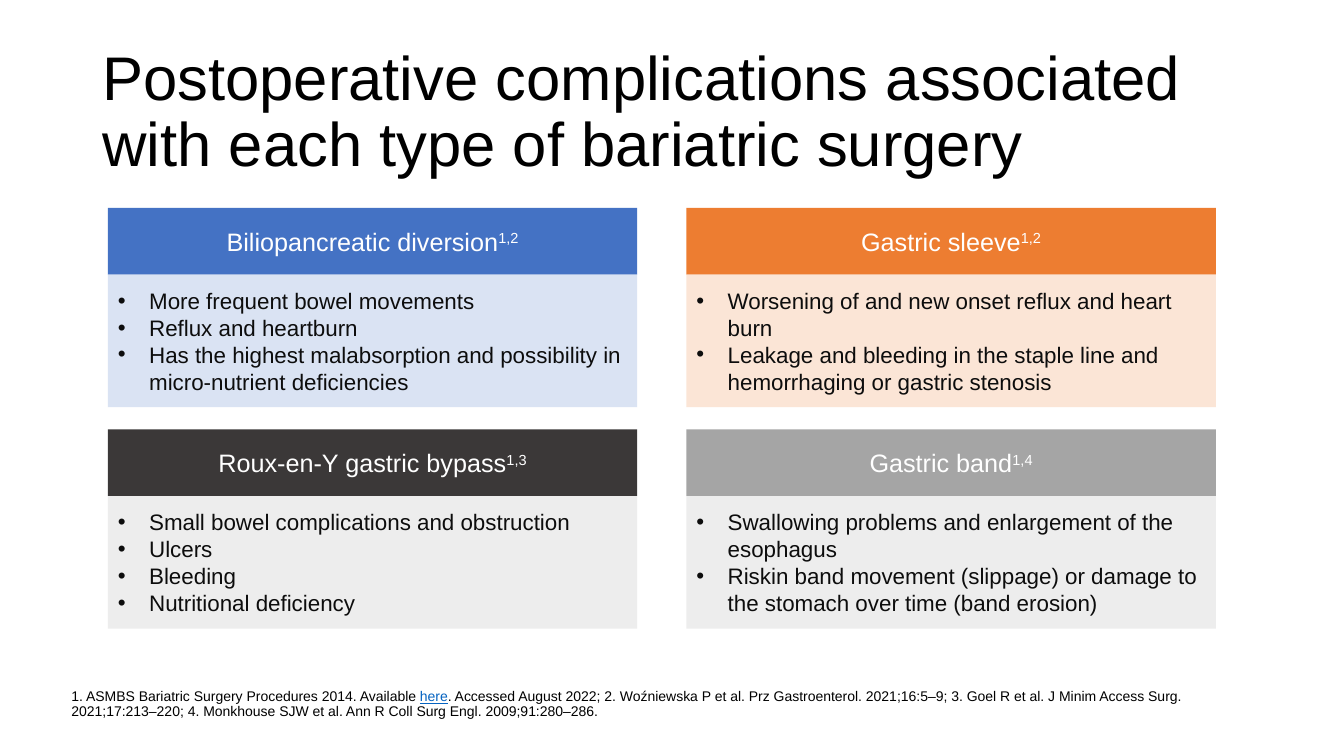
from lxml.etree import SubElement
from pptx import Presentation
from pptx.dml.color import RGBColor
from pptx.enum.shapes import MSO_SHAPE
from pptx.enum.text import MSO_ANCHOR, PP_ALIGN
from pptx.oxml.ns import qn
from pptx.util import Cm, Pt

BLACK = RGBColor(0x00, 0x00, 0x00)
WHITE = RGBColor(0xFF, 0xFF, 0xFF)
INK = RGBColor(0x0D, 0x0D, 0x0D)
LINK_BLUE = RGBColor(0x05, 0x63, 0xC1)
BLUE = RGBColor(0x44, 0x72, 0xC4)
PALE_BLUE = RGBColor(0xDA, 0xE3, 0xF3)
ORANGE = RGBColor(0xED, 0x7D, 0x31)
PALE_ORANGE = RGBColor(0xFB, 0xE5, 0xD6)
CHARCOAL = RGBColor(0x3B, 0x38, 0x38)
GREY = RGBColor(0xA5, 0xA5, 0xA5)
PALE_GREY = RGBColor(0xED, 0xED, 0xED)

# Lengths in centimetres
CARD_LEFT, CARD_TOP = 2.72, 5.24
CARD_WIDTH, HEADER_HEIGHT, BODY_HEIGHT = 13.34, 1.68, 3.34
COLUMN_STEP, ROW_STEP = 14.58, 5.58
BULLET_INDENT = 0.79

# Row by row: surgery, reference numbers, header colour, body colour, complications
SURGERIES = [
    ("Biliopancreatic diversion", "1,2", BLUE, PALE_BLUE,
     ["More frequent bowel movements",
      "Reflux and heartburn",
      "Has the highest malabsorption and possibility in micro-nutrient deficiencies"]),
    ("Gastric sleeve", "1,2", ORANGE, PALE_ORANGE,
     ["Worsening of and new onset reflux and heart burn",
      "Leakage and bleeding in the staple line and hemorrhaging or gastric stenosis"]),
    ("Roux-en-Y gastric bypass", "1,3", CHARCOAL, PALE_GREY,
     ["Small bowel complications and obstruction",
      "Ulcers",
      "Bleeding",
      "Nutritional deficiency"]),
    ("Gastric band", "1,4", GREY, PALE_GREY,
     ["Swallowing problems and enlargement of the esophagus",
      "Riskin band movement (slippage) or damage to the stomach over time (band erosion)"]),
]


class SlideBuilder:
    font_name = "Arial"

    def __init__(self, slide):
        self.slide = slide

    def style(self, paragraph, size, color):
        paragraph.font.name = self.font_name
        paragraph.font.size = Pt(size)
        paragraph.font.color.rgb = color

    def text_box(self, left, top, width, height, anchor):
        box = self.slide.shapes.add_textbox(Cm(left), Cm(top), Cm(width), Cm(height))
        frame = box.text_frame
        frame.word_wrap = True
        frame.vertical_anchor = anchor
        frame.paragraphs[0].line_spacing = 0.9
        return frame

    def title(self, text):
        frame = self.text_box(2.33, 1.02, 29.21, 3.68, MSO_ANCHOR.MIDDLE)
        heading = frame.paragraphs[0]
        heading.add_run().text = text
        self.style(heading, 44, BLACK)

    def references(self, before, link, after):
        frame = self.text_box(1.8, 17.25, 29.74, 0.89, MSO_ANCHOR.BOTTOM)
        frame.margin_left = frame.margin_right = 0
        frame.margin_top = frame.margin_bottom = 0
        citation = frame.paragraphs[0]
        self.style(citation, 10, BLACK)
        citation.add_run().text = before
        link_run = citation.add_run()
        link_run.text = link
        link_run.font.color.rgb = LINK_BLUE
        link_run.font.underline = True
        citation.add_run().text = after

    def panel(self, left, top, height, color):
        """Draw a filled card part and return its text frame."""
        rectangle = self.slide.shapes.add_shape(
            MSO_SHAPE.RECTANGLE, Cm(left), Cm(top), Cm(CARD_WIDTH), Cm(height))
        rectangle.shadow.inherit = False
        rectangle.fill.solid()
        rectangle.fill.fore_color.rgb = color
        rectangle.line.fill.background()
        frame = rectangle.text_frame
        frame.word_wrap = True
        frame.vertical_anchor = MSO_ANCHOR.MIDDLE
        return frame

    def header(self, left, top, color, surgery, reference_numbers):
        heading = self.panel(left, top, HEADER_HEIGHT, color).paragraphs[0]
        heading.alignment = PP_ALIGN.CENTER
        self.style(heading, 18, WHITE)
        heading.add_run().text = surgery
        superscript = heading.add_run()
        superscript.text = reference_numbers
        superscript.font._element.set("baseline", "30000")

    def bullet_list(self, left, top, color, complications):
        frame = self.panel(left, top, BODY_HEIGHT, color)
        frame.text = "\n".join(complications)
        for item in frame.paragraphs:
            item.alignment = PP_ALIGN.LEFT
            properties = item._p.get_or_add_pPr()
            properties.set("marL", str(Cm(BULLET_INDENT)))
            properties.set("indent", str(-Cm(BULLET_INDENT)))
            SubElement(properties, qn("a:buFont"), typeface=self.font_name)
            SubElement(properties, qn("a:buChar"), char="•")
            self.style(item, 16, INK)


def main():
    presentation = Presentation()
    presentation.slide_width = Cm(33.87)
    presentation.slide_height = Cm(19.05)
    builder = SlideBuilder(presentation.slides.add_slide(presentation.slide_layouts[6]))

    builder.title("Postoperative complications associated with each type of bariatric surgery")
    builder.references(
        "1. ASMBS Bariatric Surgery Procedures 2014. Available ",
        "here",
        ". Accessed August 2022; 2. Woźniewska P et al. Prz Gastroenterol. 2021;16:5–9; "
        "3. Goel R et al. J Minim Access Surg. 2021;17:213–220; "
        "4. Monkhouse SJW et al. Ann R Coll Surg Engl. 2009;91:280–286.")

    for index, (surgery, numbers, dark, pale, complications) in enumerate(SURGERIES):
        row, column = divmod(index, 2)
        left = CARD_LEFT + column * COLUMN_STEP
        top = CARD_TOP + row * ROW_STEP
        builder.header(left, top, dark, surgery, numbers)
        builder.bullet_list(left, top + HEADER_HEIGHT, pale, complications)

    presentation.save("out.pptx")


if __name__ == "__main__":
    main()
